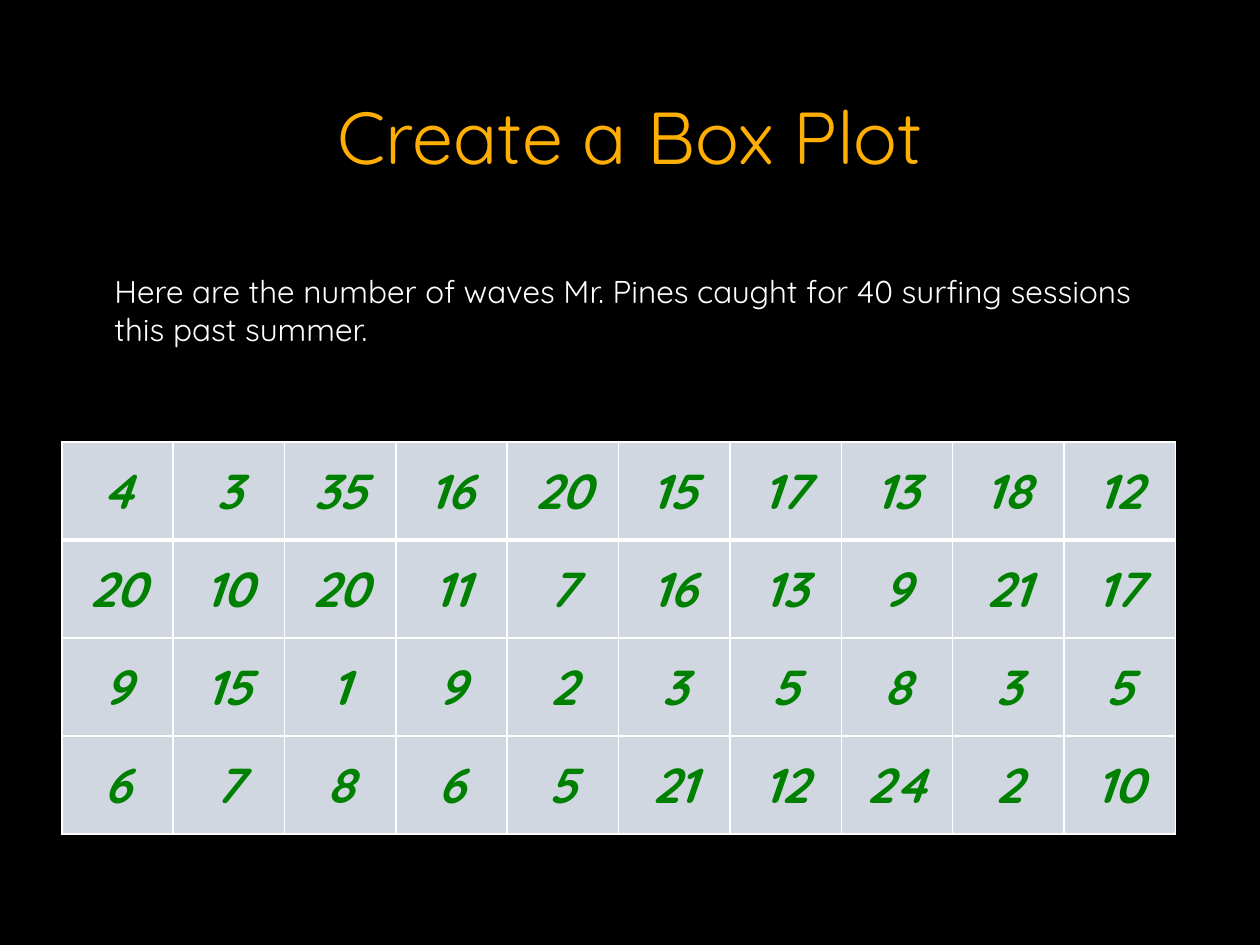
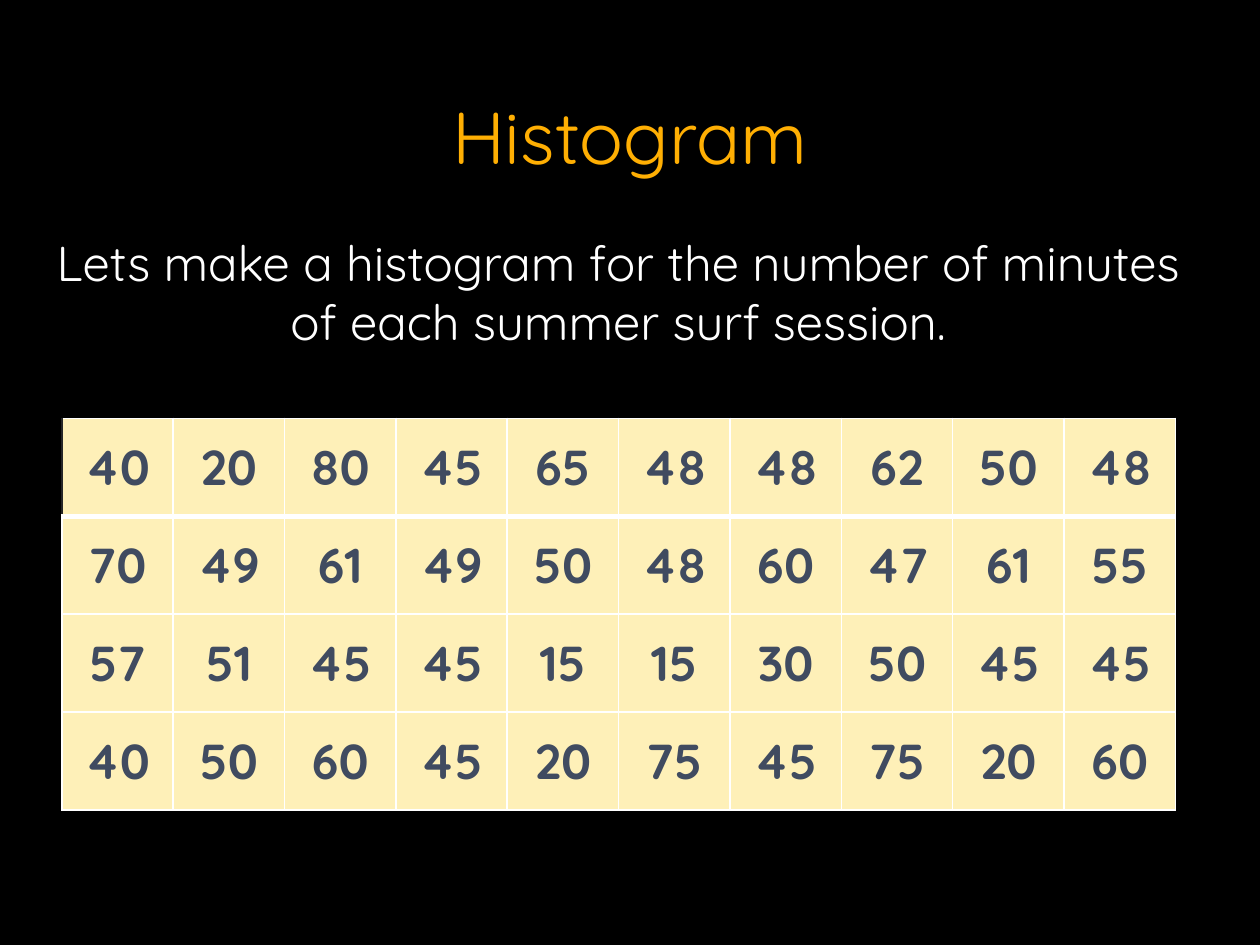
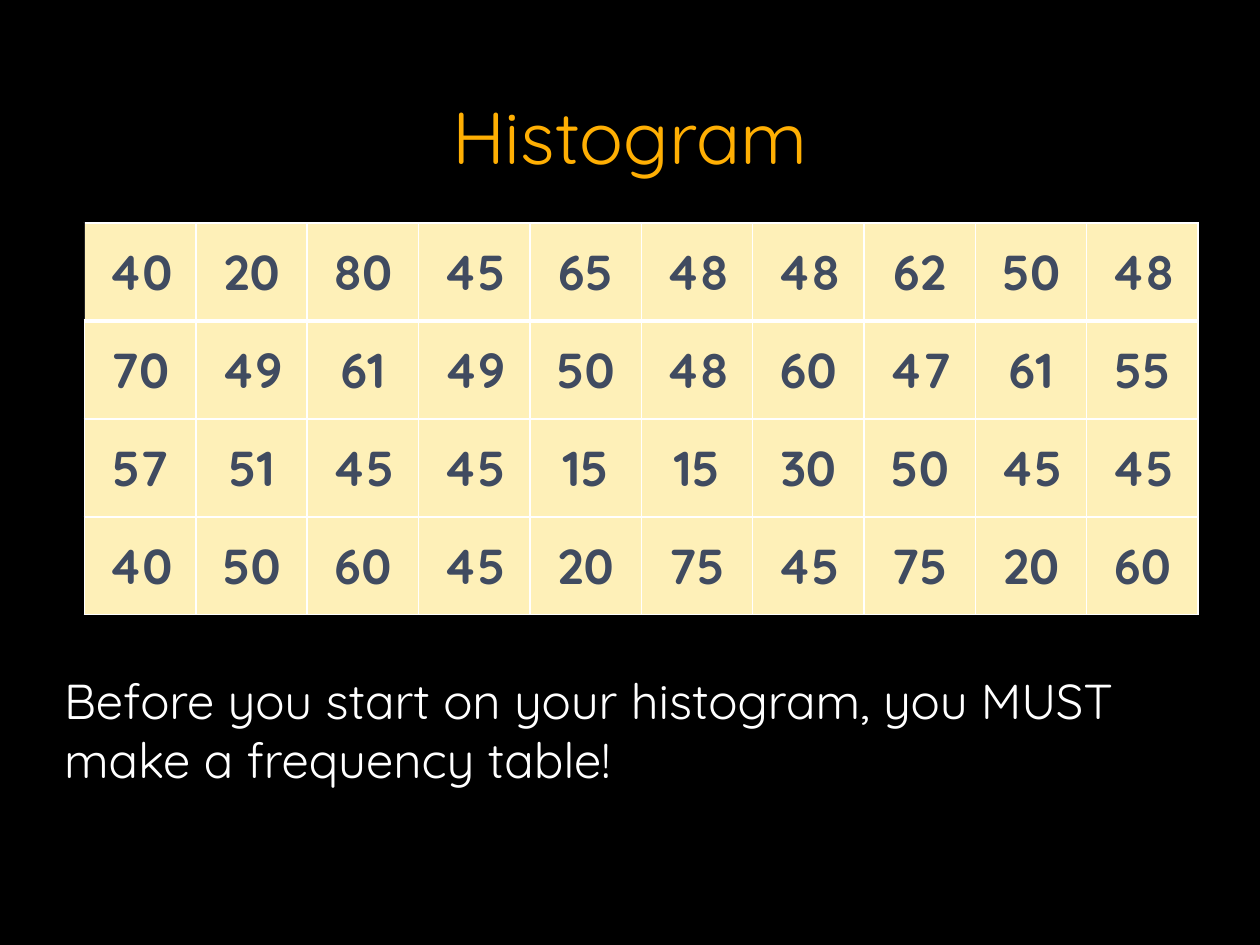
from lxml import etree
from pptx import Presentation
from pptx.dml.color import RGBColor
from pptx.enum import text
from pptx.oxml import ns
from pptx.util import Inches, Pt

BLACK = RGBColor(0x00, 0x00, 0x00)
WHITE = RGBColor(0xFF, 0xFF, 0xFF)
CHARCOAL = RGBColor(0x26, 0x26, 0x26)
ORANGE = RGBColor(0xFF, 0xAF, 0x03)
GREEN = RGBColor(0x00, 0x80, 0x00)
SLATE = RGBColor(0x40, 0x4B, 0x60)
PALE_BLUE = RGBColor(0xD1, 0xD7, 0xE1)
PALE_YELLOW = RGBColor(0xFE, 0xF0, 0xB8)
FONT = "Quicksand"
CENTER = text.PP_ALIGN.CENTER
LEFT = text.PP_ALIGN.LEFT
MIDDLE = text.MSO_ANCHOR.MIDDLE
TOP = text.MSO_ANCHOR.TOP

TITLE_BOX = (0.67, 0.64, 8.66, 0.86)
TABLE_SIZE = (8.84, 3.11)

WAVES = [
    [4, 3, 35, 16, 20, 15, 17, 13, 18, 12],
    [20, 10, 20, 11, 7, 16, 13, 9, 21, 17],
    [9, 15, 1, 9, 2, 3, 5, 8, 3, 5],
    [6, 7, 8, 6, 5, 21, 12, 24, 2, 10],
]
MINUTES = [
    [40, 20, 80, 45, 65, 48, 48, 62, 50, 48],
    [70, 49, 61, 49, 50, 48, 60, 47, 61, 55],
    [57, 51, 45, 45, 15, 15, 30, 50, 45, 45],
    [40, 50, 60, 45, 20, 75, 45, 75, 20, 60],
]


def style_paragraph(para, size, color, align, bold=False, italic=False):
    para.alignment = align
    font = para.font
    font.name, font.size = FONT, Pt(size)
    font.bold, font.italic = bold, italic
    font.color.rgb = color


def add_text(page, box, words, size, color=WHITE, align=LEFT, anchor=TOP):
    frame = page.shapes.add_textbox(*map(Inches, box)).text_frame
    frame.word_wrap = True
    frame.vertical_anchor = anchor
    frame.text = words
    style_paragraph(frame.paragraphs[0], size, color, align)


def add_border(cell, side, color, width):
    properties = cell._tc.get_or_add_tcPr()
    line = etree.SubElement(properties, ns.qn(f"a:ln{side}"), w=str(Pt(width)))
    fill = etree.SubElement(line, ns.qn("a:solidFill"))
    etree.SubElement(fill, ns.qn("a:srgbClr"), val=str(color))


def add_number_table(page, left, top, numbers, fill, color, italic=False, corner=WHITE):
    box = map(Inches, (left, top, *TABLE_SIZE))
    table = page.shapes.add_table(len(numbers), len(numbers[0]), *box).table
    table.horz_banding = False
    for row, values in enumerate(numbers):
        for column, value in enumerate(values):
            cell = table.cell(row, column)
            add_border(cell, "L", corner if row == column == 0 else WHITE, 1)
            add_border(cell, "R", WHITE, 1)
            add_border(cell, "T", WHITE, 3 if row == 1 else 1)
            add_border(cell, "B", WHITE, 3 if row == 0 else 1)
            cell.fill.solid()
            cell.fill.fore_color.rgb = fill
            cell.vertical_anchor = MIDDLE
            cell.text = str(value)
            style_paragraph(cell.text_frame.paragraphs[0], 28, color, CENTER, True, italic)


def add_minutes_table(page, left, top):
    add_number_table(page, left, top, MINUTES, PALE_YELLOW, SLATE, corner=CHARCOAL)


def add_page(deck, title):
    page = deck.slides.add_slide(deck.slide_layouts[6])
    page.background.fill.solid()
    page.background.fill.fore_color.rgb = BLACK
    add_text(page, TITLE_BOX, title, 42, ORANGE, CENTER, MIDDLE)
    return page


def build_box_plot(deck):
    page = add_page(deck, "Create a Box Plot")
    add_text(page, (0.81, 2.11, 8.52, 0.71),
             "Here are the number of waves Mr. Pines caught for 40 surfing sessions "
             "this past summer.", 18)
    add_number_table(page, 0.49, 3.51, WAVES, PALE_BLUE, GREEN, italic=True)


def build_histogram(deck):
    page = add_page(deck, "Histogram")
    add_text(page, (0.24, 1.8, 9.33, 1.04),
             "Lets make a histogram for the number of minutes of each summer "
             "surf session.", 28, align=CENTER)
    add_minutes_table(page, 0.49, 3.32)


def build_frequency_reminder(deck):
    page = add_page(deck, "Histogram")
    add_minutes_table(page, 0.67, 1.77)
    add_text(page, (0.41, 5.27, 8.92, 1.04),
             "Before you start on your histogram, you MUST make a frequency table!", 28)


def main():
    deck = Presentation()
    deck.slide_width, deck.slide_height = Inches(10), Inches(7.5)
    build_box_plot(deck)
    build_histogram(deck)
    build_frequency_reminder(deck)
    deck.save("out.pptx")


if __name__ == "__main__":
    main()
